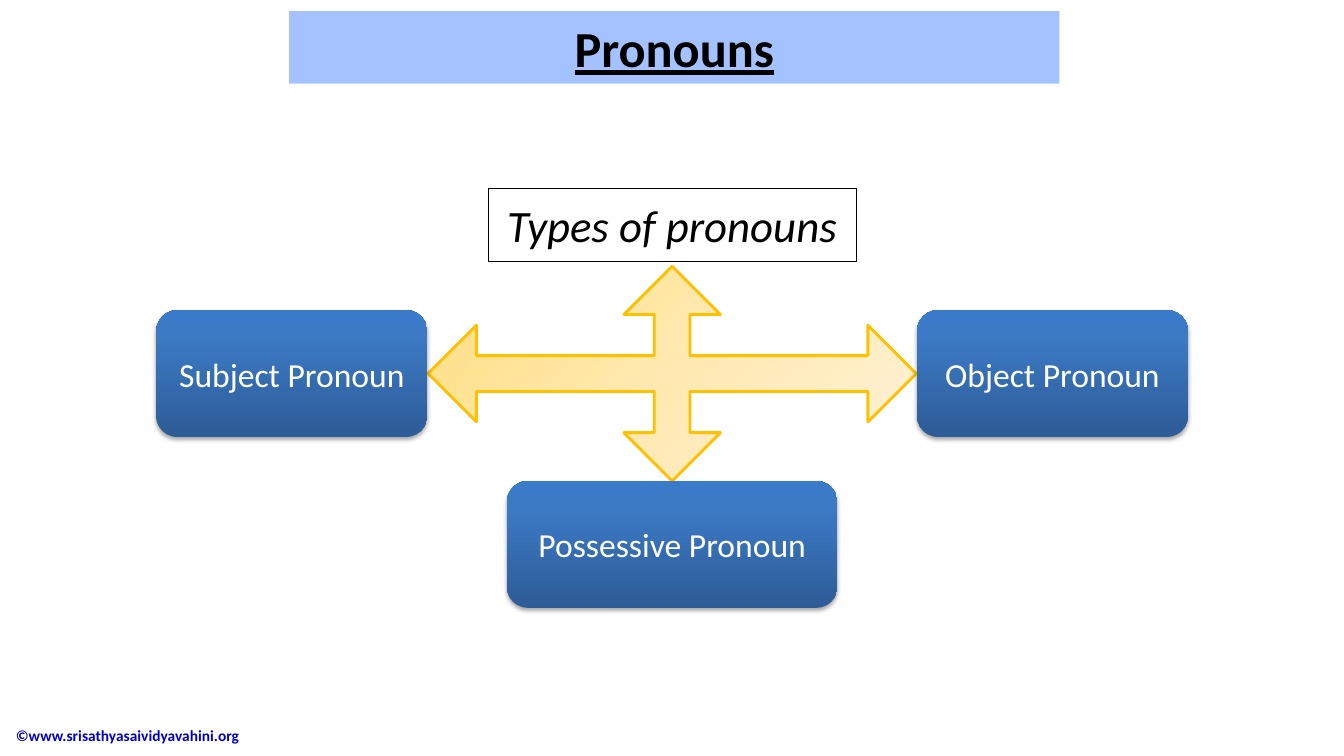
from lxml.etree import SubElement
from pptx import Presentation
from pptx.dml.color import RGBColor
from pptx.enum.shapes import MSO_SHAPE
from pptx.enum.text import MSO_ANCHOR, PP_ALIGN
from pptx.oxml.ns import qn
from pptx.util import Cm, Pt

BLACK = RGBColor(0x00, 0x00, 0x00)
WHITE = RGBColor(0xFF, 0xFF, 0xFF)
NAVY = RGBColor(0x00, 0x00, 0xCC)
SKY = RGBColor(0xA3, 0xC2, 0xFF)
GOLD = RGBColor(0xFF, 0xC0, 0x00)
BLUES = [(0, RGBColor(0x2D, 0x5C, 0x97)), (80, RGBColor(0x3C, 0x7A, 0xC5)),
         (100, RGBColor(0x39, 0x7B, 0xC9))]
CREAMS = [(0, RGBColor(0xFF, 0xDE, 0x7E)), (50, RGBColor(0xFF, 0xE9, 0xB1)),
          (100, RGBColor(0xFF, 0xF2, 0xD9))]


def add_text(shape, text, align=PP_ALIGN.CENTER, **style):
    frame = shape.text_frame
    frame.word_wrap = True
    frame.vertical_anchor = MSO_ANCHOR.MIDDLE
    para = frame.paragraphs[0]
    para.text = text
    para.alignment = align
    color = style.pop("color")
    for name, value in {"name": "Calibri", **style}.items():
        setattr(para.font, name, value)
    para.font.color.rgb = color


def add_shape(slide, kind, box, fill=None, line=None, width=0):
    """Add a plain shape; box holds left, top, width and height in cm."""
    shape = slide.shapes.add_shape(kind, *map(Cm, box))
    if fill is None:
        shape.fill.background()
    else:
        shape.fill.solid()
        shape.fill.fore_color.rgb = fill
    if line is None:
        shape.line.fill.background()
    else:
        shape.line.color.rgb = line
        shape.line.width = Pt(width)
    shape.shadow.inherit = False
    return shape


def add_color(parent, color):
    return SubElement(parent, qn("a:srgbClr"), val=str(color))


def set_blend(shape, stops, angle):
    """Fill with a linear gradient, its angle clockwise in degrees."""
    shape.fill.gradient()
    grad = shape.element.spPr.find(qn("a:gradFill"))
    for child in list(grad):
        grad.remove(child)
    stop_list = SubElement(grad, qn("a:gsLst"))
    for place, color in stops:
        add_color(SubElement(stop_list, qn("a:gs"), pos=str(place * 1000)), color)
    SubElement(grad, qn("a:lin"), ang=str(angle * 60000), scaled="0")


def set_shade(shape):
    """Drop a soft shadow straight below the shape."""
    effects = shape.element.spPr.find(qn("a:effectLst"))
    shade = SubElement(effects, qn("a:outerShdw"), blurRad=str(Pt(3.1)),
                       dist=str(Pt(1.8)), dir="5400000", rotWithShape="0")
    SubElement(add_color(shade, BLACK), qn("a:alpha"), val="35000")


def add_title(slide, box):
    bar = add_shape(slide, MSO_SHAPE.RECTANGLE, box, SKY)
    add_text(bar, "Pronouns", size=Pt(36), bold=True, underline=True, color=BLACK)


def add_type(slide, text, box):
    card = add_shape(slide, MSO_SHAPE.ROUNDED_RECTANGLE, box)
    set_blend(card, BLUES, 270)
    set_shade(card)
    add_text(card, text, size=Pt(24), color=WHITE)


def add_chart_of_types(slide, box):
    """Place the heading, the four-way arrow and the three types in the box."""
    left, top, width, height = box
    mid = left + width / 2
    head_w, head_h = 9.27, 1.83
    head = add_shape(slide, MSO_SHAPE.RECTANGLE,
                     (mid - head_w / 2, top, head_w, head_h), None, BLACK, 0.75)
    add_text(head, "Types of pronouns", size=Pt(32), italic=True, color=BLACK)

    card_w, card_h, wide = 6.83, 3.2, 8.33
    low = top + height - card_h
    arrow_w, arrow_h = 12.3, 5.41
    arrow = add_shape(slide, MSO_SHAPE.QUAD_ARROW,
                      (mid - arrow_w / 2, low - arrow_h, arrow_w, arrow_h),
                      None, GOLD, 2)
    for index, value in enumerate((0.167, 0.225, 0.225)):
        arrow.adjustments[index] = value
    set_blend(arrow, CREAMS, 45)

    side = low - (arrow_h + card_h) / 2
    add_type(slide, "Subject Pronoun", (left, side, card_w, card_h))
    add_type(slide, "Object Pronoun", (left + width - card_w, side, card_w, card_h))
    add_type(slide, "Possessive Pronoun", (mid - wide / 2, low, wide, card_h))


def add_footer(slide, box):
    note = slide.shapes.add_textbox(*map(Cm, box))
    add_text(note, "©www.srisathyasaividyavahini.org", PP_ALIGN.LEFT,
             size=Pt(11), bold=True, color=NAVY)


def main():
    deck = Presentation()
    deck.slide_width, deck.slide_height = Cm(33.87), Cm(19.05)
    slide = deck.slides.add_slide(deck.slide_layouts[6])
    add_footer(slide, (0.15, 18.03, 8.97, 1.02))
    add_chart_of_types(slide, (3.94, 4.75, 26, 10.57))
    add_title(slide, (7.29, 0.28, 19.41, 1.83))
    deck.save("out.pptx")


if __name__ == "__main__":
    main()
